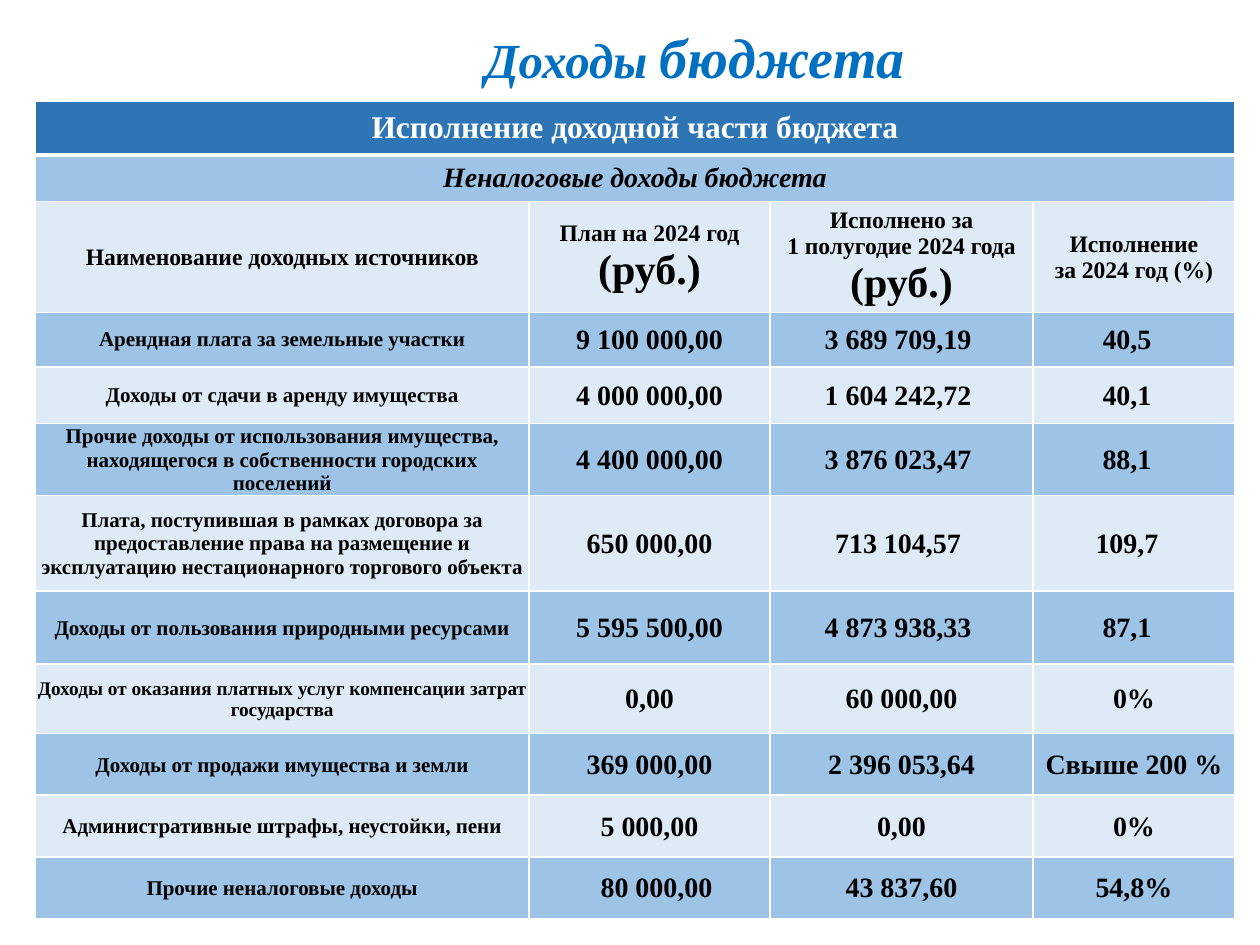
from copy import deepcopy
from dataclasses import dataclass

from lxml.etree import SubElement
from pptx import Presentation
from pptx.dml.color import RGBColor as Rgb
from pptx.enum.text import MSO_ANCHOR as Anchor, MSO_AUTO_SIZE as AutoSize, PP_ALIGN as Align
from pptx.oxml.ns import qn
from pptx.util import Pt


@dataclass(frozen=True)
class Theme:
    font: str = "Times New Roman"
    white: str = "FFFFFF"
    black: str = "000000"
    title: str = "0070C0"
    title_outline: str = "4472C4"
    header: str = "2E75B6"
    bands: tuple = ("9DC3E6", "DEEBF7")
    title_sizes: tuple = (28, 32)
    header_size: float = 18
    section_size: float = 16
    heading_size: float = 13.5
    unit_size: float = 24
    source_size: float = 12
    small_source_size: float = 11
    amount_size: float = 16


THEME = Theme()
TITLE_BOX = (229.7, 9.4, 334.8, 46.1)
TABLE_BOX = (20.2, 57.6, 685.4, 463)
COLUMN_WIDTHS = (282.2, 137.5, 150.5, 115.2)
ROW_HEIGHTS = (31, 26.6, 52.6, 31, 32.4, 41, 54.7, 41.8, 39.6, 35.3, 35.3, 35.3)
TIGHT = 0.7
SPACE = 4

HEADINGS = (
    ("Наименование доходных источников", None),
    ("План на 2024 год", "(руб.)"),
    ("Исполнено за\n1 полугодие 2024 года", "(руб.)"),
    ("Исполнение\nза 2024 год (%)", None),
)
INCOME = (
    ("Арендная плата за земельные участки", "9 100 000,00", "3 689 709,19", "40,5"),
    ("Доходы от сдачи в аренду имущества", "4 000 000,00", "1 604 242,72", "40,1"),
    ("Прочие доходы от использования имущества, находящегося в собственности "
     "городских поселений", "4 400 000,00", "3 876 023,47", "88,1"),
    ("Плата, поступившая в рамках договора за предоставление права на размещение и "
     "эксплуатацию нестационарного торгового объекта", "650 000,00", "713 104,57", "109,7"),
    ("Доходы от пользования природными ресурсами", "5 595 500,00", "4 873 938,33", "87,1"),
    ("Доходы от оказания платных услуг компенсации затрат государства",
     "0,00", "60 000,00", "0%"),
    ("Доходы от продажи имущества и земли", "369 000,00", "2 396 053,64", "Свыше 200 %"),
    ("Административные штрафы, неустойки, пени", "5 000,00", "0,00", "0%"),
    ("Прочие неналоговые доходы", "80 000,00", "43 837,60", "54,8%"),
)
SHIFTED_ROWS = 5
SMALL_SOURCE_ROW = 5


def format_font(font, size, color, italic=False):
    values = {"name": THEME.font, "size": Pt(size), "bold": True, "italic": italic}
    for attribute, value in values.items():
        setattr(font, attribute, value)
    font.color.rgb = Rgb.from_string(color)


def add_line(parent, tag, color, width):
    line = SubElement(parent, qn(tag), w=str(Pt(width)))
    fill = SubElement(line, qn("a:solidFill"))
    SubElement(fill, qn("a:srgbClr"), val=color)
    return line


def write_lines(cell, lines, color=THEME.black, italic=False):
    frame = cell.text_frame
    for index, (text, size) in enumerate(lines):
        paragraph = frame.add_paragraph() if index else frame.paragraphs[0]
        paragraph.text = text
        paragraph.alignment = Align.CENTER
        for run in paragraph.runs:
            format_font(run.font, size, color, italic)
        properties = paragraph.runs[0].font._element
        for line_break in paragraph._p.findall(qn("a:br")):
            line_break.insert(0, deepcopy(properties))


def set_margins(cell, left=TIGHT, right=TIGHT):
    margins = {"left": left, "top": TIGHT, "right": right, "bottom": 0}
    for side, margin in margins.items():
        setattr(cell, f"margin_{side}", Pt(margin))


def style_cell(cell, row):
    cell.vertical_anchor = Anchor.MIDDLE
    properties = cell._tc.get_or_add_tcPr()
    widths = {"L": 1, "R": 1, "T": 3 if row == 1 else 1, "B": 3 if row == 0 else 1}
    for side, width in widths.items():
        add_line(properties, f"a:ln{side}", THEME.white, width)
    cell.fill.solid()
    color = THEME.bands[(row - 1) % 2] if row else THEME.header
    cell.fill.fore_color.rgb = Rgb.from_string(color)


def add_title(slide, box):
    frame = slide.shapes.add_textbox(*map(Pt, box)).text_frame
    frame.word_wrap = True
    frame.auto_size = AutoSize.SHAPE_TO_FIT_TEXT
    heading = frame.paragraphs[0]
    heading.alignment = Align.CENTER
    for text, size in zip(("Доходы ", "бюджета"), THEME.title_sizes):
        word = heading.add_run()
        word.text = text
        format_font(word.font, size, THEME.title, italic=True)
        properties = word.font._element
        properties.insert(0, add_line(properties, "a:ln", THEME.title_outline, 0.8))


def fill_income_row(table, row, index, income):
    source, *amounts = income
    source_size = THEME.small_source_size if index == SMALL_SOURCE_ROW else THEME.source_size
    source_cell = table.cell(row, 0)
    write_lines(source_cell, [(source, source_size)])
    if index:
        set_margins(source_cell)
    for column, amount in enumerate(amounts, 1):
        cell = table.cell(row, column)
        write_lines(cell, [(amount, THEME.amount_size)])
        shift = SPACE * (column - 1) if index < SHIFTED_ROWS else 0
        indent = 2 * SPACE if column == 1 and index == len(INCOME) - 1 else 0
        set_margins(cell, TIGHT + indent, TIGHT + shift)


def add_income_table(slide, box):
    size = len(ROW_HEIGHTS), len(COLUMN_WIDTHS)
    table = slide.shapes.add_table(*size, *map(Pt, box)).table
    for column, width in zip(table.columns, COLUMN_WIDTHS):
        column.width = Pt(width)
    for row, height in enumerate(ROW_HEIGHTS):
        table.rows[row].height = Pt(height)
        for column in range(len(COLUMN_WIDTHS)):
            style_cell(table.cell(row, column), row)

    for row in (0, 1):
        table.cell(row, 0).merge(table.cell(row, len(COLUMN_WIDTHS) - 1))
    write_lines(table.cell(0, 0), [("Исполнение доходной части бюджета", THEME.header_size)],
                THEME.white)
    write_lines(table.cell(1, 0), [("Неналоговые доходы бюджета", THEME.section_size)],
                italic=True)
    for column, (heading, unit) in enumerate(HEADINGS):
        lines = [(heading, THEME.heading_size)]
        if unit:
            lines.append((unit, THEME.unit_size))
        write_lines(table.cell(2, column), lines)
    for index, income in enumerate(INCOME):
        fill_income_row(table, index + 3, index, income)


def main():
    deck = Presentation()
    deck.slide_width, deck.slide_height = Pt(720), Pt(540)
    slide = deck.slides.add_slide(deck.slide_layouts[6])
    add_income_table(slide, TABLE_BOX)
    add_title(slide, TITLE_BOX)
    deck.save("out.pptx")


if __name__ == "__main__":
    main()
